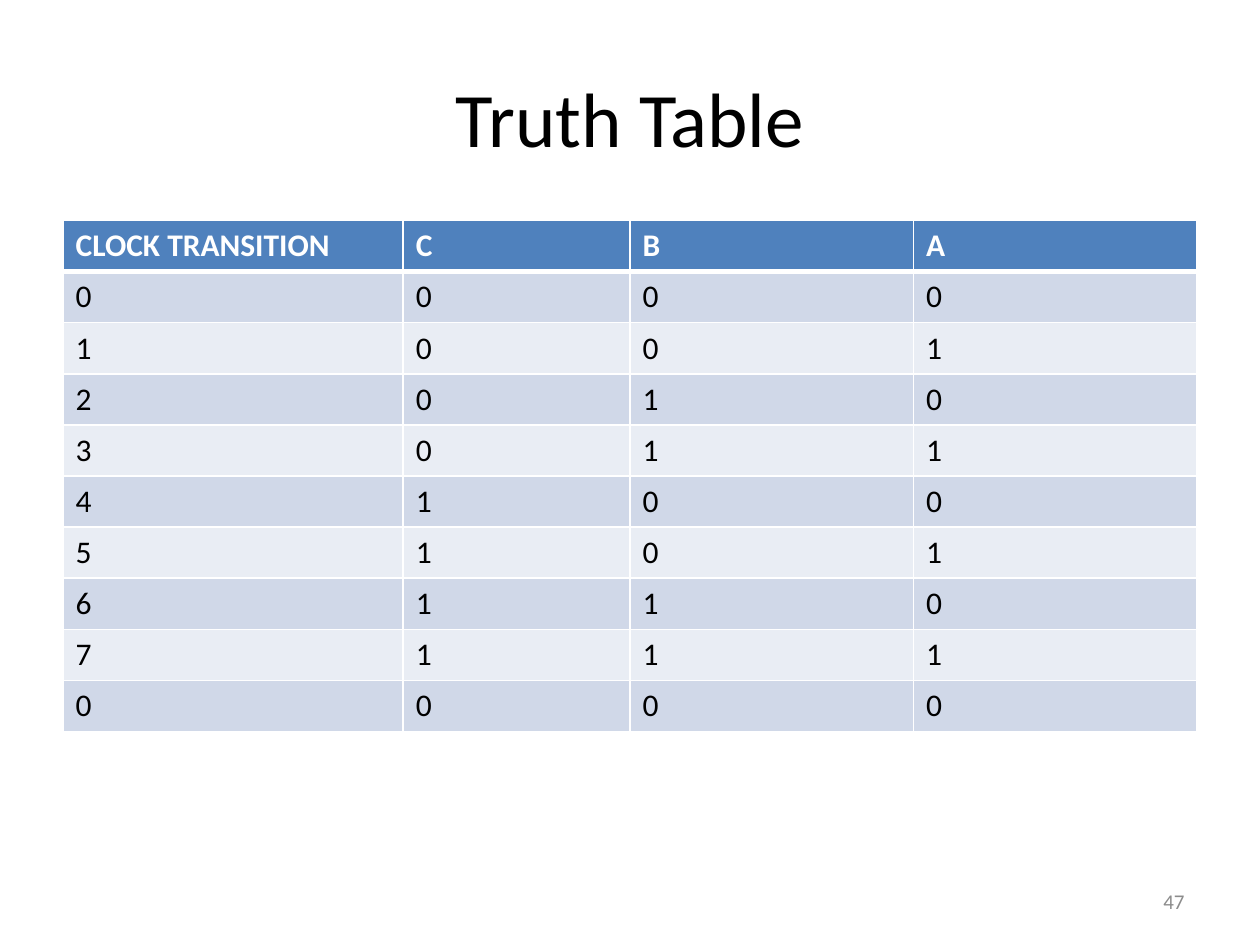
from lxml.etree import SubElement
from pptx import Presentation
from pptx.dml.color import RGBColor
from pptx.enum.text import MSO_ANCHOR as ANCHOR, PP_ALIGN as ALIGN
from pptx.oxml.ns import qn
from pptx.util import Pt

BLACK = RGBColor(0x00, 0x00, 0x00)
WHITE = RGBColor(0xFF, 0xFF, 0xFF)
GRAY = RGBColor(0x8C, 0x8C, 0x8C)
HEADER_BLUE = RGBColor(0x4F, 0x81, 0xBD)
BAND_DARK = RGBColor(0xD0, 0xD8, 0xE8)
BAND_LIGHT = RGBColor(0xE9, 0xED, 0xF4)

HEADERS = ["CLOCK TRANSITION", "C", "B", "A"]
COLUMN_SHARES = [0.3, 0.2, 0.25, 0.25]
CLOCK_COUNTS = [*range(8), 0]


def style_font(font, **formats):
    """Apply the slide's typeface and the given format values."""
    color = formats.pop("color")
    for name, value in {"name": "Calibri", **formats}.items():
        setattr(font, name, value)
    font.color.rgb = color


def add_text(s, box, text, align, size, color):
    """Place one vertically centred line of text in the box."""
    tf = s.shapes.add_textbox(*map(Pt, box)).text_frame
    tf.word_wrap = True
    tf.vertical_anchor = ANCHOR.MIDDLE
    p = tf.paragraphs[0]
    p.alignment = align
    r = p.add_run()
    r.text = text
    style_font(r.font, size=Pt(size), color=color)


def add_borders(cell, top, bottom):
    """Draw white borders around a cell, with the given top and bottom widths."""
    tc_pr = cell._tc.get_or_add_tcPr()
    for side, width in {"L": 1, "R": 1, "T": top, "B": bottom}.items():
        line = SubElement(tc_pr, qn(f"a:ln{side}"), w=str(Pt(width)))
        fill = SubElement(line, qn("a:solidFill"))
        SubElement(fill, qn("a:srgbClr"), val=str(WHITE))


def add_truth_table(s, box):
    """Fill the box with the banded truth table of a three-bit counter."""
    rows = [HEADERS] + [[n, n >> 2 & 1, n >> 1 & 1, n & 1] for n in CLOCK_COUNTS]
    width, height = box[2:]
    table = s.shapes.add_table(len(rows), len(HEADERS), *map(Pt, box)).table
    for column, share in zip(table.columns, COLUMN_SHARES):
        column.width = Pt(width * share)
    for i, values in enumerate(rows):
        table.rows[i].height = Pt(height / len(rows))
        is_header = i == 0
        band = BAND_DARK if i % 2 else BAND_LIGHT
        for j, value in enumerate(values):
            cell = table.cell(i, j)
            add_borders(cell, 3 if i == 1 else 1, 3 if is_header else 1)
            cell.fill.solid()
            cell.fill.fore_color.rgb = HEADER_BLUE if is_header else band
            r = cell.text_frame.paragraphs[0].add_run()
            r.text = str(value)
            style_font(r.font, size=Pt(18), bold=is_header,
                       color=WHITE if is_header else BLACK)


def main():
    """Build and save the truth table slide."""
    prs = Presentation()
    prs.slide_width, prs.slide_height = Pt(720), Pt(540)
    s = prs.slides.add_slide(prs.slide_layouts[6])
    add_text(s, (36, 21.6, 648, 90), "Truth Table", ALIGN.CENTER, 44, BLACK)
    add_truth_table(s, (36, 126, 648, 292))
    add_text(s, (516, 500.5, 168, 28.75), "47", ALIGN.RIGHT, 12, GRAY)
    prs.save("out.pptx")


if __name__ == "__main__":
    main()
